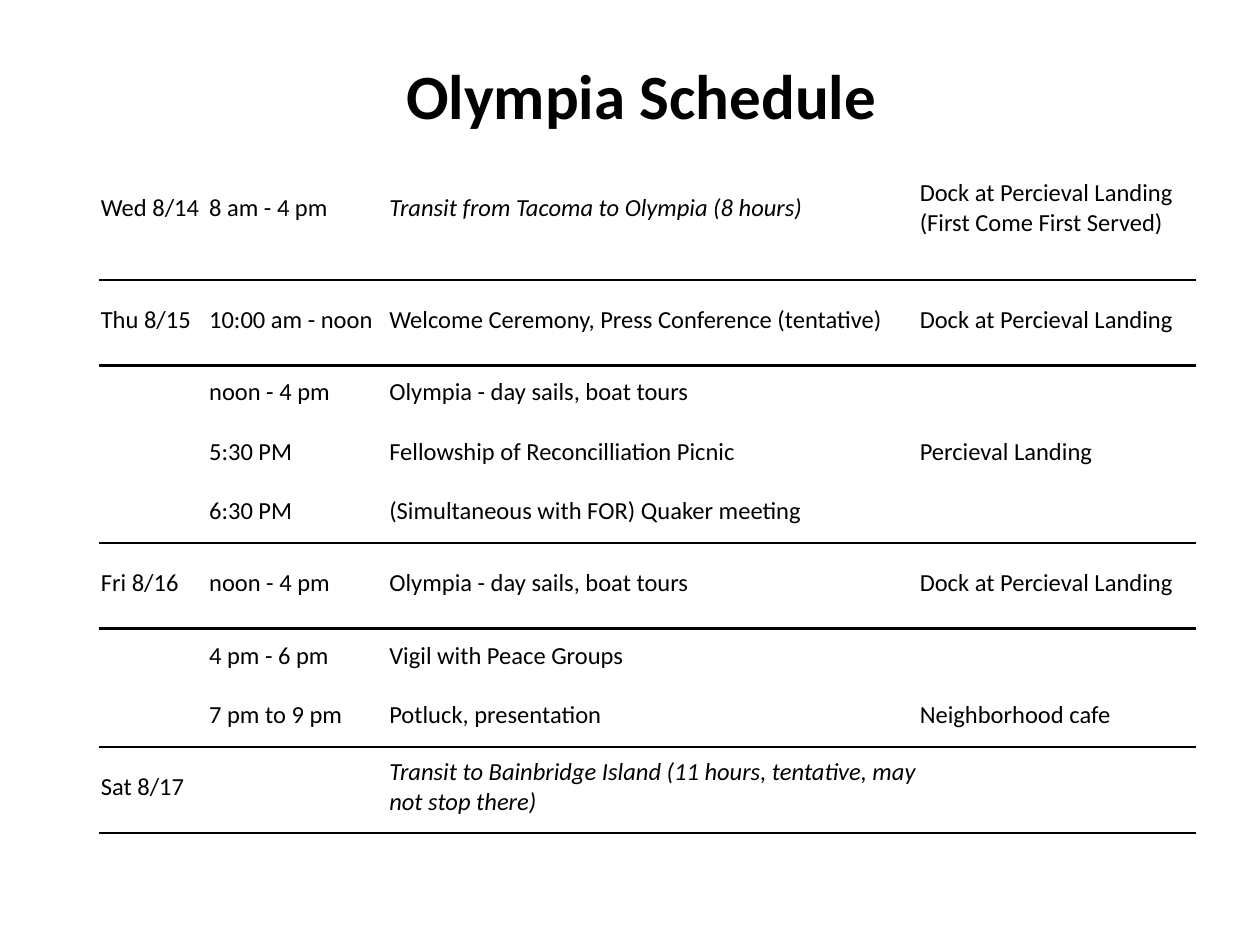
from lxml import etree
from pptx import Presentation, util as u
from pptx.dml.color import RGBColor
from pptx.enum import text
from pptx.oxml.ns import qn

BLACK = RGBColor(0, 0, 0)

COLUMN_WIDTHS = [0.86, 1.43, 4.21, 2.2]
ROW_HEIGHTS = [1.1, 0.68, 0.47, 0.47, 0.47, 0.68, 0.47, 0.47, 0.68]
SCHEDULE = [
    ("Wed 8/14", "8 am - 4 pm", "Transit from Tacoma to Olympia (8 hours)",
     "Dock at Percieval Landing (First Come First Served)"),
    ("Thu 8/15", "10:00 am - noon", "Welcome Ceremony, Press Conference (tentative)",
     "Dock at Percieval Landing"),
    ("", "noon - 4 pm", "Olympia - day sails, boat tours", ""),
    ("", "5:30 PM", "Fellowship of Reconcilliation Picnic", "Percieval Landing"),
    ("", "6:30 PM", "(Simultaneous with FOR) Quaker meeting", ""),
    ("Fri 8/16", "noon - 4 pm", "Olympia - day sails, boat tours",
     "Dock at Percieval Landing"),
    ("", "4 pm - 6 pm", "Vigil with Peace Groups", ""),
    ("", "7 pm to 9 pm", "Potluck, presentation", "Neighborhood cafe"),
    ("Sat 8/17", "", "Transit to Bainbridge Island (11 hours, tentative, may not stop there)", ""),
]


class ScheduleSlide:
    font_name = "Calibri"
    title_size = 36
    body_size = 14
    rule_width = 1.5

    def __init__(self, slide):
        self.slide = slide

    def style(self, font, size, bold=False, italic=False):
        font.name = self.font_name
        font.size = u.Pt(size)
        font.bold = bold
        font.italic = italic
        font.color.rgb = BLACK

    def title(self, wording, left, top, width, height):
        box = self.slide.shapes.add_textbox(
            u.Inches(left), u.Inches(top), u.Inches(width), u.Inches(height))
        frame = box.text_frame
        frame.word_wrap = True
        frame.vertical_anchor = text.MSO_ANCHOR.BOTTOM
        frame.text = wording
        paragraph = frame.paragraphs[0]
        paragraph.alignment = text.PP_ALIGN.CENTER
        paragraph.line_spacing = 0.9
        self.style(paragraph.runs[0].font, self.title_size, bold=True)

    def rule(self, cell, side):
        properties = cell._tc.get_or_add_tcPr()
        line = etree.SubElement(properties, qn(f"a:{side}"), w=str(u.Pt(self.rule_width)))
        fill = etree.SubElement(line, qn("a:solidFill"))
        etree.SubElement(fill, qn("a:srgbClr"), val=str(BLACK))

    def cell(self, cell, wording, italic, sides):
        cell.margin_left = cell.margin_right = cell.margin_top = u.Inches(0.01)
        cell.margin_bottom = u.Inches(0.05)
        cell.vertical_anchor = text.MSO_ANCHOR.MIDDLE
        cell.text_frame.text = wording
        self.style(cell.text_frame.paragraphs[0].font, self.body_size, italic=italic)
        for run in cell.text_frame.paragraphs[0].runs:
            self.style(run.font, self.body_size, italic=italic)
        for side in sides:
            self.rule(cell, side)
        cell.fill.background()

    def table(self, rows, left, top, widths, heights):
        table = self.slide.shapes.add_table(
            len(rows), len(widths), u.Inches(left), u.Inches(top),
            u.Inches(sum(widths)), u.Inches(sum(heights))).table
        table.first_row = table.horz_banding = False
        for column, width in zip(table.columns, widths):
            column.width = u.Inches(width)
        for row, height in zip(table.rows, heights):
            row.height = u.Inches(height)

        for index, row in enumerate(rows):
            # A rule separates each day from the next and closes the table
            sides = []
            if index > 0 and row[0]:
                sides.append("lnT")
            if index == len(rows) - 1 or rows[index + 1][0]:
                sides.append("lnB")
            for position, wording in enumerate(row):
                italic = wording.startswith("Transit")
                self.cell(table.cell(index, position), wording, italic, sides)


def main():
    presentation = Presentation()
    presentation.slide_width = u.Inches(10)
    presentation.slide_height = u.Inches(7.5)
    page = ScheduleSlide(presentation.slides.add_slide(presentation.slide_layouts[6]))

    # Title
    page.title("Olympia Schedule", 0.69, 0.5, 8.8, 0.61)

    # Schedule by day
    page.table(SCHEDULE, 0.79, 1.12, COLUMN_WIDTHS, ROW_HEIGHTS)

    presentation.save("out.pptx")


if __name__ == "__main__":
    main()
